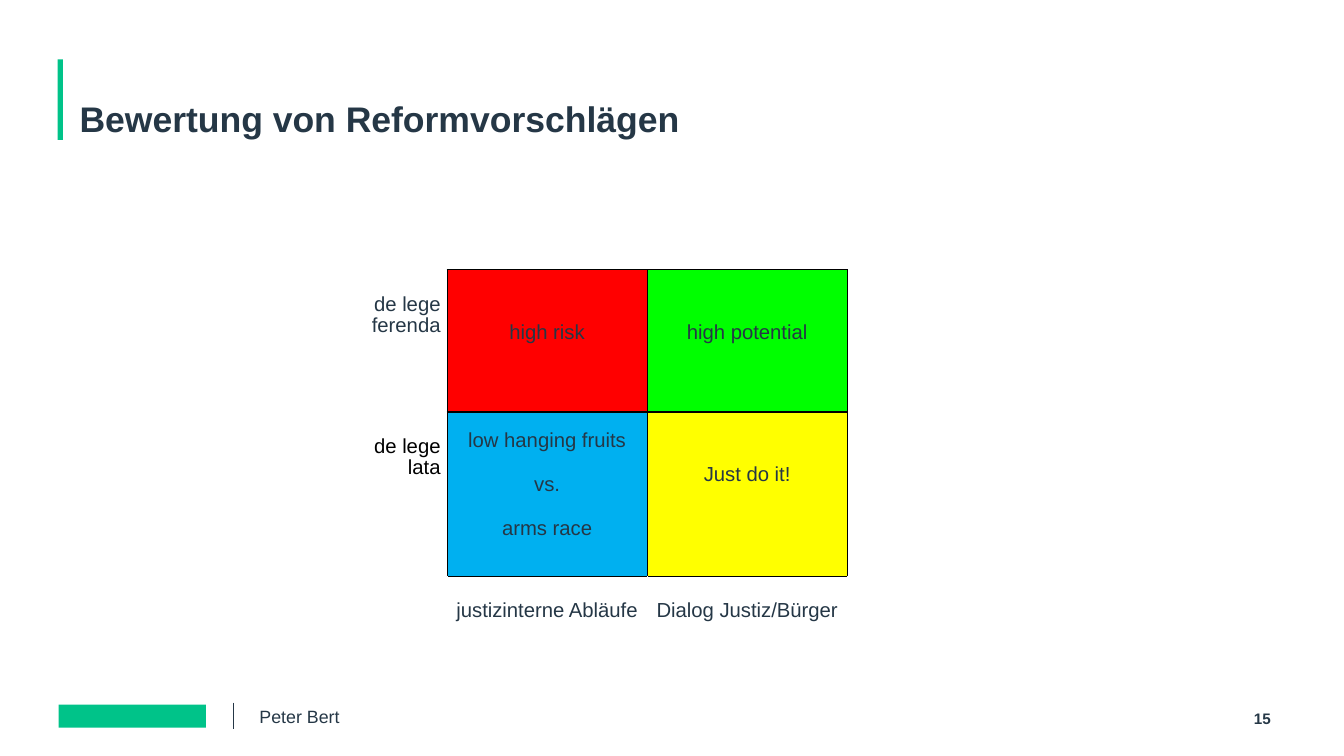
from typing import NamedTuple

from lxml import etree
from pptx import Presentation, util as u
from pptx.dml.color import RGBColor
from pptx.enum import shapes, text
from pptx.oxml import ns

INK, GREEN, BLACK = "253746", "00C389", "000000"
LEFT, MID, RIGHT = text.PP_ALIGN.LEFT, text.PP_ALIGN.CENTER, text.PP_ALIGN.RIGHT


class Label(NamedTuple):
    words: str
    box: tuple[float, float, float, float]
    size: int
    bold: bool = False
    align: text.PP_ALIGN = LEFT
    anchor: text.MSO_ANCHOR = text.MSO_ANCHOR.MIDDLE
    pitch: float = 1.0


class Field(NamedTuple):
    row: int
    col: int
    lines: tuple[str, ...]
    top: float
    edges: str
    fill: str = ""
    color: str = INK
    align: text.PP_ALIGN = MID


LABELS = [
    Label("Bewertung von Reformvorschlägen", (2.21, 1.75, 33, 2.16), 28, True,
          anchor=text.MSO_ANCHOR.BOTTOM, pitch=0.9),
    Label("Peter Bert", (7.21, 19.66, 22.25, 0.51), 14),
    Label("15", (34.49, 19.71, 0.82, 0.51), 12, True, RIGHT),
]
BARS = [(1.6, 1.65, 0.15, 2.24), (1.63, 19.58, 4.09, 0.64)]

COLS = (2.41, 5.56, 5.56)
ROWS = (3.95, 4.56, 1.98)
FIELDS = [
    Field(0, 0, ("de lege ferenda",), 0.67, "R", align=RIGHT),
    Field(0, 1, ("high risk",), 1.45, "LRTB", "FF0000"),
    Field(0, 2, ("high potential",), 1.45, "LRTB", "00FF00"),
    Field(1, 0, ("de lege lata",), 0.67, "R", color=BLACK, align=RIGHT),
    Field(1, 1, ("low hanging fruits", "vs.", "arms race"), 0.5, "LRTB", "00B0F0"),
    Field(1, 2, ("Just do it!",), 1.45, "LRTB", "FFFF00"),
    Field(2, 0, (), 0, ""),
    Field(2, 1, ("justizinterne Abläufe",), 0.67, "T"),
    Field(2, 2, ("Dialog Justiz/Bürger",), 0.67, "T"),
]


def paint(fill, color: str) -> None:
    fill.solid()
    fill.fore_color.rgb = RGBColor.from_string(color)


def style(para, size: int, color: str, align: text.PP_ALIGN, bold: bool = False) -> None:
    para.alignment = align
    font = para.font
    font.name, font.size, font.bold = "Arial", u.Pt(size), bold
    paint(font.fill, color)


def add_bar(slide, box: tuple[float, float, float, float]) -> None:
    bar = slide.shapes.add_shape(shapes.MSO_SHAPE.RECTANGLE, *map(u.Cm, box))
    bar.shadow.inherit = False
    paint(bar.fill, GREEN)
    bar.line.fill.background()


def add_rule(slide) -> None:
    x = u.Cm(6.48)
    rule = slide.shapes.add_connector(
        shapes.MSO_CONNECTOR.STRAIGHT, x, u.Cm(19.53), x, u.Cm(20.27))
    paint(rule.line.fill, INK)
    rule.line.width = u.Pt(0.5)
    etree.SubElement(rule._element.spPr, ns.qn("a:effectLst"))


def add_label(slide, item: Label) -> None:
    frame = slide.shapes.add_textbox(*map(u.Cm, item.box)).text_frame
    frame.word_wrap = True
    frame.vertical_anchor = item.anchor
    frame.margin_left = frame.margin_right = frame.margin_top = frame.margin_bottom = 0
    para = frame.paragraphs[0]
    para.text = item.words
    para.line_spacing = item.pitch
    style(para, item.size, INK, item.align, item.bold)


def add_edge(cell, side: str) -> None:
    line = etree.SubElement(
        cell._tc.get_or_add_tcPr(), ns.qn(f"a:ln{side}"), w=str(u.Pt(1)))
    solid = etree.SubElement(line, ns.qn("a:solidFill"))
    etree.SubElement(solid, ns.qn("a:srgbClr"), val=BLACK)


def fill_cell(cell, item: Field) -> None:
    for side in item.edges:
        add_edge(cell, side)
    if item.fill:
        paint(cell.fill, item.fill)
    else:
        cell.fill.background()
    cell.margin_left = cell.margin_right = u.Cm(0.18)
    cell.margin_top, cell.margin_bottom = u.Cm(item.top), 0
    frame = cell.text_frame
    frame.text = "\n".join(item.lines)
    for para in frame.paragraphs:
        style(para, 16, item.color, item.align)
        para.line_spacing = 0.95
    for para in frame.paragraphs[:-1]:
        para.space_after = u.Pt(18)


def add_grid(slide) -> None:
    grid = slide.shapes.add_table(
        len(ROWS), len(COLS), u.Cm(10.01), u.Cm(7.5),
        u.Cm(sum(COLS)), u.Cm(sum(ROWS))).table
    grid.first_row = grid.horz_banding = False
    for col, width in zip(grid.columns, COLS):
        col.width = u.Cm(width)
    for row, height in zip(grid.rows, ROWS):
        row.height = u.Cm(height)
    for item in FIELDS:
        fill_cell(grid.cell(item.row, item.col), item)


def main() -> None:
    deck = Presentation()
    deck.slide_width, deck.slide_height = u.Cm(37.34), u.Cm(21.01)
    slide = deck.slides.add_slide(deck.slide_layouts[6])
    # Title bar, footer block and rule
    for box in BARS:
        add_bar(slide, box)
    add_rule(slide)
    # Title and footer text
    for item in LABELS:
        add_label(slide, item)
    # Matrix of reform proposals
    add_grid(slide)
    deck.save("out.pptx")


if __name__ == "__main__":
    main()
